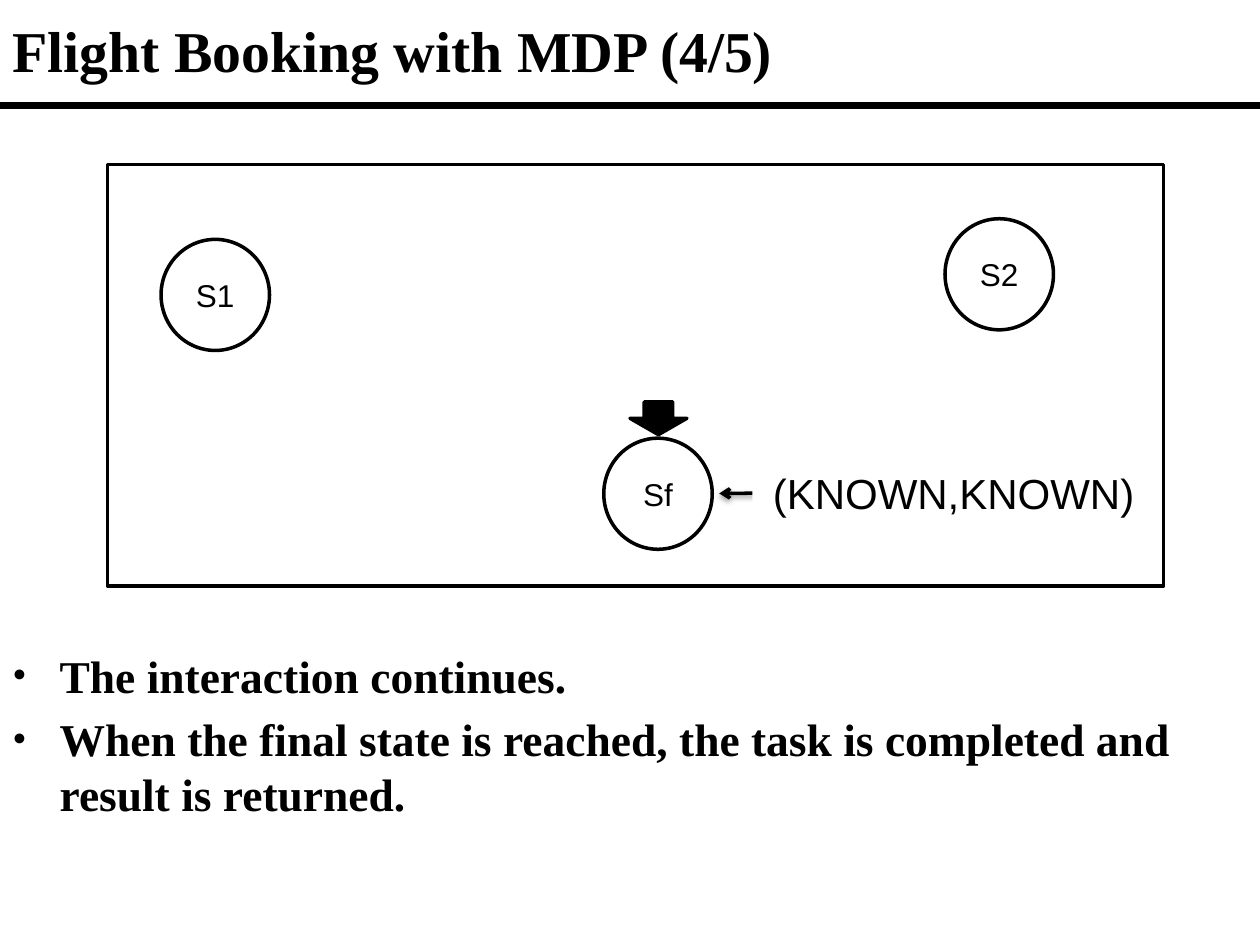
from dataclasses import dataclass

from lxml import etree
from pptx import Presentation
from pptx.dml.color import RGBColor
from pptx.enum import shapes, text
from pptx.oxml import parse_xml
from pptx.oxml.ns import nsdecls, qn
from pptx.util import Pt


@dataclass(frozen=True)
class Theme:
    ink: RGBColor = RGBColor(0, 0, 0)
    paper: RGBColor = RGBColor(255, 255, 255)
    serif: str = "Times New Roman"
    sans: str = "Arial"
    title: int = 33
    body: int = 26
    label: int = 24
    state: int = 18
    rule: float = 4.5
    line: float = 2


T = Theme()
KIND = shapes.MSO_SHAPE


def add_run(para, words, size, font, bold=False):
    run = para.add_run()
    run.text = words
    run.font.size = Pt(size)
    run.font.name = font
    run.font.bold = bold
    run.font.color.rgb = T.ink


def add_form(slide, kind, box, fill=T.paper, edge=True):
    form = slide.shapes.add_shape(kind, *map(Pt, box))
    form.shadow.inherit = False
    form.fill.solid()
    form.fill.fore_color.rgb = fill
    if edge:
        form.line.color.rgb = T.ink
        form.line.width = Pt(T.line)
    else:
        form.line.fill.background()
    return form


def add_label(form, words, size):
    """Centre one line of sans text in a shape."""
    frame = form.text_frame
    frame.word_wrap = False
    frame.vertical_anchor = text.MSO_ANCHOR.MIDDLE
    para = frame.paragraphs[0]
    para.alignment = text.PP_ALIGN.CENTER
    add_run(para, words, size, T.sans)


def add_state(slide, name, left, top):
    add_label(add_form(slide, KIND.OVAL, (left, top, 62, 63.5)), name, T.state)


def add_line(slide, start, end, width):
    line = slide.shapes.add_connector(
        shapes.MSO_CONNECTOR.STRAIGHT, *map(Pt, start + end))
    line.line.color.rgb = T.ink
    line.line.width = Pt(width)
    effects = etree.SubElement(line._element.spPr, qn("a:effectLst"))
    return line, effects


def add_arrow(slide, start, end):
    """Draw a line with an open head and a soft shadow below it."""
    line, effects = add_line(slide, start, end, T.line)
    etree.SubElement(line.line._get_or_add_ln(), qn("a:tailEnd"), type="arrow")
    effects.append(parse_xml(
        f'<a:outerShdw {nsdecls("a")} blurRad="{Pt(3.1)}" dist="{Pt(1.6)}" '
        f'dir="5400000" rotWithShape="0"><a:srgbClr val="{T.ink}">'
        '<a:alpha val="38000"/></a:srgbClr></a:outerShdw>'))


def add_frame(slide, box):
    frame = slide.shapes.add_textbox(*map(Pt, box)).text_frame
    frame.word_wrap = True
    return frame


def add_title(slide, words):
    frame = add_frame(slide, (0, 0, 720, 57))
    frame.vertical_anchor = text.MSO_ANCHOR.MIDDLE
    add_run(frame.paragraphs[0], words, T.title, T.serif, True)


def add_list(slide, box, items):
    frame = add_frame(slide, box)
    for i, item in enumerate(items):
        para = frame.add_paragraph() if i else frame.paragraphs[0]
        para.space_before = Pt(0.2 * T.body)
        props = para._p.get_or_add_pPr()
        props.set("marL", str(Pt(27)))
        props.set("indent", str(Pt(-27)))
        etree.SubElement(props, qn("a:buSzPct"), val="90000")
        etree.SubElement(props, qn("a:buFont"), typeface=T.serif)
        etree.SubElement(props, qn("a:buChar"), char="•")
        add_run(para, item, T.body, T.serif, True)


def main():
    deck = Presentation()
    deck.slide_width, deck.slide_height = Pt(720), Pt(540)
    slide = deck.slides.add_slide(deck.slide_layouts[6])

    add_line(slide, (0, 60.3), (720, 60.3), T.rule)
    add_title(slide, "Flight Booking with MDP (4/5)")

    add_form(slide, KIND.RECTANGLE, (61.5, 94, 603.5, 241))
    for name, left, top in (("S1", 92, 136.8), ("Sf", 345, 250.4),
                            ("S2", 540, 125)):
        add_state(slide, name, left, top)
    add_form(slide, KIND.DOWN_ARROW, (360, 229.7, 32.5, 18.7), T.ink)
    add_arrow(slide, (433.5, 281.8), (411, 282))
    label = add_form(slide, KIND.RECTANGLE, (430, 263.5, 230, 36), edge=False)
    add_label(label, "(KNOWN,KNOWN)", T.label)

    add_list(slide, (0, 366.5, 720, 108), (
        "The interaction continues.",
        "When the final state is reached, the task is completed and "
        "result is returned."))

    deck.save("out.pptx")


if __name__ == "__main__":
    main()
